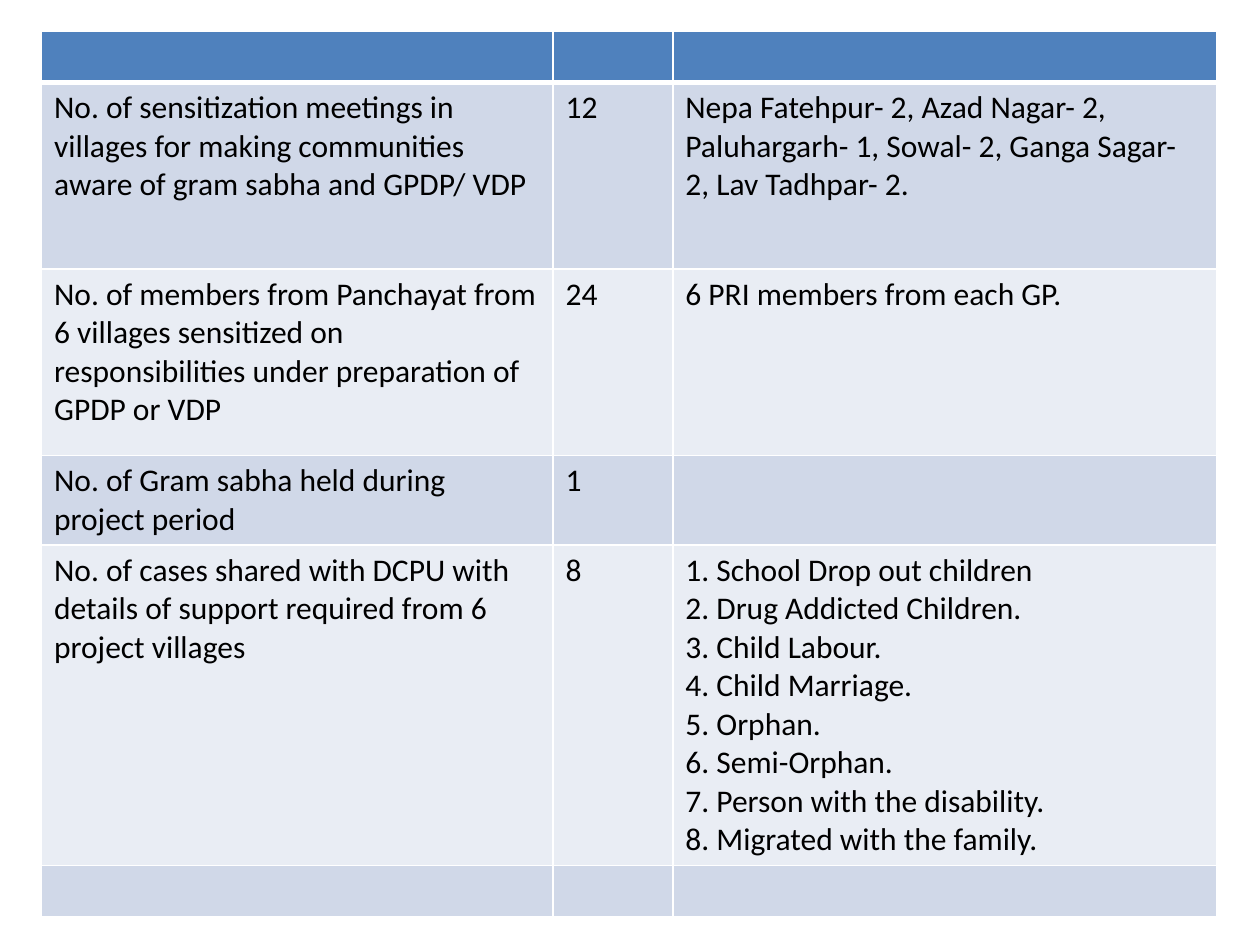
from lxml import etree
from pptx import Presentation
from pptx.dml.color import RGBColor
from pptx.oxml.ns import qn
from pptx.util import Inches, Pt

HUES = {"head": "4F81BD", "dark": "D0D8E8", "light": "E9EDF4",
        "line": "FFFFFF", "text": "000000"}
COLS = [4.06, 0.95, 4.32]
ROWS = [
    (0.4, ["", "", ""]),
    (1.48, ["No. of sensitization meetings in villages for making communities "
            "aware of gram sabha and GPDP/ VDP",
            "12",
            "Nepa Fatehpur- 2, Azad Nagar- 2, Paluhargarh- 1, Sowal- 2, "
            "Ganga Sagar- 2, Lav Tadhpar- 2."]),
    (1.48, ["No. of members from Panchayat from 6 villages sensitized on "
            "responsibilities under preparation of GPDP or VDP",
            "24",
            "6 PRI members from each GP."]),
    (0.7, ["No. of Gram sabha held during project period", "1", ""]),
    (2.5, ["No. of cases shared with DCPU with details of support required "
           "from 6 project villages",
           "8",
           "1. School Drop out children\n2. Drug Addicted Children.\n"
           "3. Child Labour.\n4. Child Marriage.\n5. Orphan.\n"
           "6. Semi-Orphan.\n7. Person with the disability.\n"
           "8. Migrated with the family."]),
    (0.4, ["", "", ""]),
]


class Deck:
    def __init__(self, slide, font="Calibri", size=18):
        self.slide, self.font, self.size = slide, font, size

    def table(self, left, top, cols, rows):
        high = sum(tall for tall, _ in rows)
        grid = self.slide.shapes.add_table(
            len(rows), len(cols), Inches(left), Inches(top),
            Inches(sum(cols)), Inches(high)).table
        for col, wide in zip(grid.columns, cols):
            col.width = Inches(wide)
        for i, (tall, texts) in enumerate(rows):
            grid.rows[i].height = Inches(tall)
            hue = "head" if i == 0 else "dark" if i % 2 else "light"
            for j, text in enumerate(texts):
                cell = grid.cell(i, j)
                self.fill(cell, hue)
                self.edge(cell, 3 if i == 1 else 1, 3 if i == 0 else 1)
                self.text(cell, text)

    def fill(self, cell, hue):
        cell.fill.solid()
        cell.fill.fore_color.rgb = RGBColor.from_string(HUES[hue])

    def edge(self, cell, top, base):
        """Draw the four borders; top and base are widths in points."""
        props = cell._tc.get_or_add_tcPr()
        sides = [("L", 1), ("R", 1), ("T", top), ("B", base)]
        for i, (side, width) in enumerate(sides):
            line = etree.Element(qn("a:ln" + side), w=str(Pt(width)))
            solid = etree.SubElement(line, qn("a:solidFill"))
            etree.SubElement(solid, qn("a:srgbClr"), val=HUES["line"])
            props.insert(i, line)

    def text(self, cell, text):
        frame = cell.text_frame
        for i, part in enumerate(text.split("\n")):
            para = frame.add_paragraph() if i else frame.paragraphs[0]
            para.font.size = Pt(self.size)
            if not part:
                continue
            run = para.add_run()
            run.text = part
            run.font.name = self.font
            run.font.size = Pt(self.size)
            run.font.color.rgb = RGBColor.from_string(HUES["text"])


def main():
    prs = Presentation()
    prs.slide_width, prs.slide_height = Inches(10), Inches(7.5)
    deck = Deck(prs.slides.add_slide(prs.slide_layouts[6]))
    deck.table(0.33, 0.25, COLS, ROWS)
    prs.save("out.pptx")


if __name__ == "__main__":
    main()
